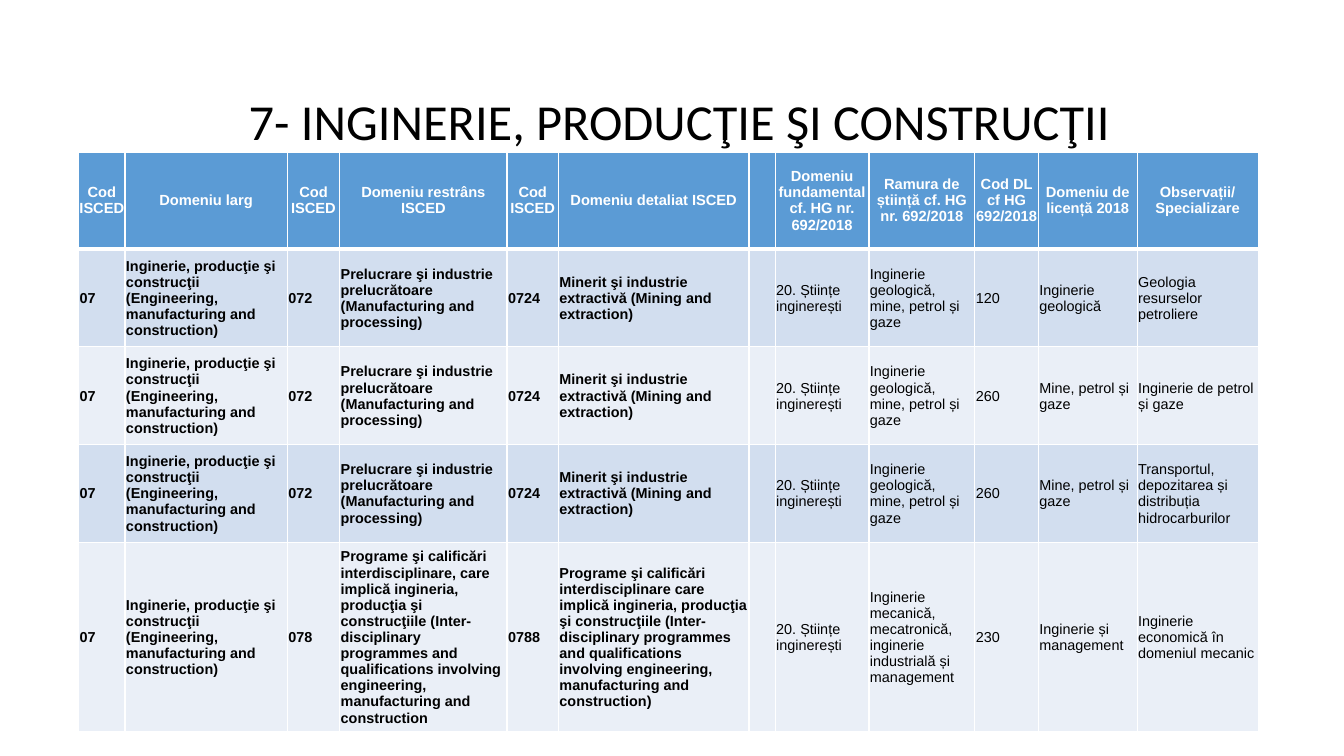
from lxml.etree import SubElement
from pptx import Presentation
from pptx.dml.color import RGBColor
from pptx.enum.text import MSO_ANCHOR as Anchor, PP_ALIGN as Align
from pptx.oxml.ns import qn
from pptx.util import Inches, Pt

WHITE = RGBColor(0xFF, 0xFF, 0xFF)
BLACK = RGBColor(0, 0, 0)
HEADER_BLUE = RGBColor(0x5B, 0x9B, 0xD5)
BANDS = [RGBColor(0xD2, 0xDE, 0xEF), RGBColor(0xEA, 0xEF, 0xF7)]

COLUMN_WIDTHS = [0.46, 1.61, 0.52, 1.66, 0.51, 1.89, 0.26, 0.93, 1.05, 0.63, 0.98, 1.2]
ROW_HEIGHTS = [0.96, 0.97, 0.97, 0.97, 1.88]
BOLD_COLUMNS = 6

HEADERS = [
    "Cod ISCED", "Domeniu larg", "Cod ISCED", "Domeniu restrâns ISCED",
    "Cod ISCED", "Domeniu detaliat ISCED", "",
    "Domeniu fundamental cf. HG nr. 692/2018",
    "Ramura de știință cf. HG nr. 692/2018", "Cod DL cf HG 692/2018",
    "Domeniu de licență 2018", "Observații/ Specializare",
]
BROAD_FIELD = [
    "07",
    "Inginerie, producţie şi construcţii (Engineering, manufacturing and construction)",
]
MINING = BROAD_FIELD + [
    "072", "Prelucrare şi industrie prelucrătoare (Manufacturing and processing)",
    "0724", "Minerit şi industrie extractivă (Mining and extraction)", "",
    "20. Științe inginerești", "Inginerie geologică, mine, petrol și gaze",
]
INTERDISCIPLINARY = BROAD_FIELD + [
    "078",
    "Programe şi calificări interdisciplinare, care implică ingineria, producţia şi "
    "construcţiile (Inter-disciplinary programmes and qualifications involving "
    "engineering, manufacturing and construction",
    "0788",
    "Programe şi calificări interdisciplinare care implică ingineria, producţia şi "
    "construcţiile (Inter-disciplinary programmes and qualifications involving "
    "engineering, manufacturing and construction)",
    "", "20. Științe inginerești",
    "Inginerie mecanică, mecatronică, inginerie industrială și management",
]
PROGRAMMES = [
    MINING + ["120", "Inginerie geologică", "Geologia resurselor petroliere"],
    MINING + ["260", "Mine, petrol și gaze", "Inginerie de petrol și gaze"],
    MINING + ["260", "Mine, petrol și gaze",
              "Transportul, depozitarea și distribuția hidrocarburilor"],
    INTERDISCIPLINARY + ["230", "Inginerie și management",
                         "Inginerie economică în domeniul mecanic"],
]


def place_title(slide, left, top, width, height):
    """Move the title placeholder into the box and format it."""
    title = slide.shapes.title
    title.left, title.top = Inches(left), Inches(top)
    title.width, title.height = Inches(width), Inches(height)
    frame = title.text_frame
    frame.text = "7- INGINERIE, PRODUCŢIE ŞI CONSTRUCŢII"
    frame.word_wrap = True
    frame.vertical_anchor = Anchor.MIDDLE
    paragraph = frame.paragraphs[0]
    paragraph.alignment = Align.CENTER
    paragraph.line_spacing = 0.9
    font = paragraph.runs[0].font
    font.size, font.name, font.color.rgb = Pt(36), "Calibri", BLACK


def set_borders(cell, widths):
    """Draw white borders, with one width in points for each side tag."""
    properties = cell._tc.get_or_add_tcPr()
    for position, (side, width) in enumerate(widths.items()):
        line = SubElement(properties, qn(f"a:{side}"), w=str(Pt(width)))
        fill = SubElement(line, qn("a:solidFill"))
        SubElement(fill, qn("a:srgbClr"), val=str(WHITE))
        properties.insert(position, line)


def format_cell(cell, text, row, column):
    """Fill one cell with its text, colours and borders."""
    is_header = row == 0
    cell.fill.solid()
    cell.fill.fore_color.rgb = HEADER_BLUE if is_header else BANDS[(row - 1) % 2]
    inset = Inches(0 if is_header else 0.01)
    cell.margin_left = cell.margin_right = cell.margin_top = inset
    cell.margin_bottom = 0
    cell.vertical_anchor = Anchor.MIDDLE
    cell.text_frame.text = text
    paragraph = cell.text_frame.paragraphs[0]
    paragraph.alignment = Align.CENTER if is_header else Align.LEFT
    for run in paragraph.runs:
        font = run.font
        font.name = "Arial"
        font.size = Pt(10.5 if is_header else 10.3)
        font.bold = is_header or column < BOLD_COLUMNS
        font.color.rgb = WHITE if is_header else BLACK
    set_borders(cell, {"lnL": 1, "lnR": 1, "lnT": 3 if row == 1 else 1,
                       "lnB": 3 if is_header else 1})


def add_programme_table(slide, left, top):
    """Add the table of study fields with its corner at the given point."""
    rows = [HEADERS] + PROGRAMMES
    table = slide.shapes.add_table(
        len(rows), len(HEADERS), Inches(left), Inches(top),
        Inches(sum(COLUMN_WIDTHS)), Inches(sum(ROW_HEIGHTS))).table
    for column, width in zip(table.columns, COLUMN_WIDTHS):
        column.width = Inches(width)
    for row, height in zip(table.rows, ROW_HEIGHTS):
        row.height = Inches(height)
    for row, texts in enumerate(rows):
        for column, text in enumerate(texts):
            format_cell(table.cell(row, column), text, row, column)


def main():
    """Build the slide and save the presentation."""
    presentation = Presentation()
    presentation.slide_width = Inches(13.33)
    presentation.slide_height = Inches(7.5)
    slide = presentation.slides.add_slide(presentation.slide_layouts[5])
    add_programme_table(slide, 0.78, 1.51)
    place_title(slide, 0.99, 0.87, 11.5, 0.72)
    presentation.save("out.pptx")


if __name__ == "__main__":
    main()
